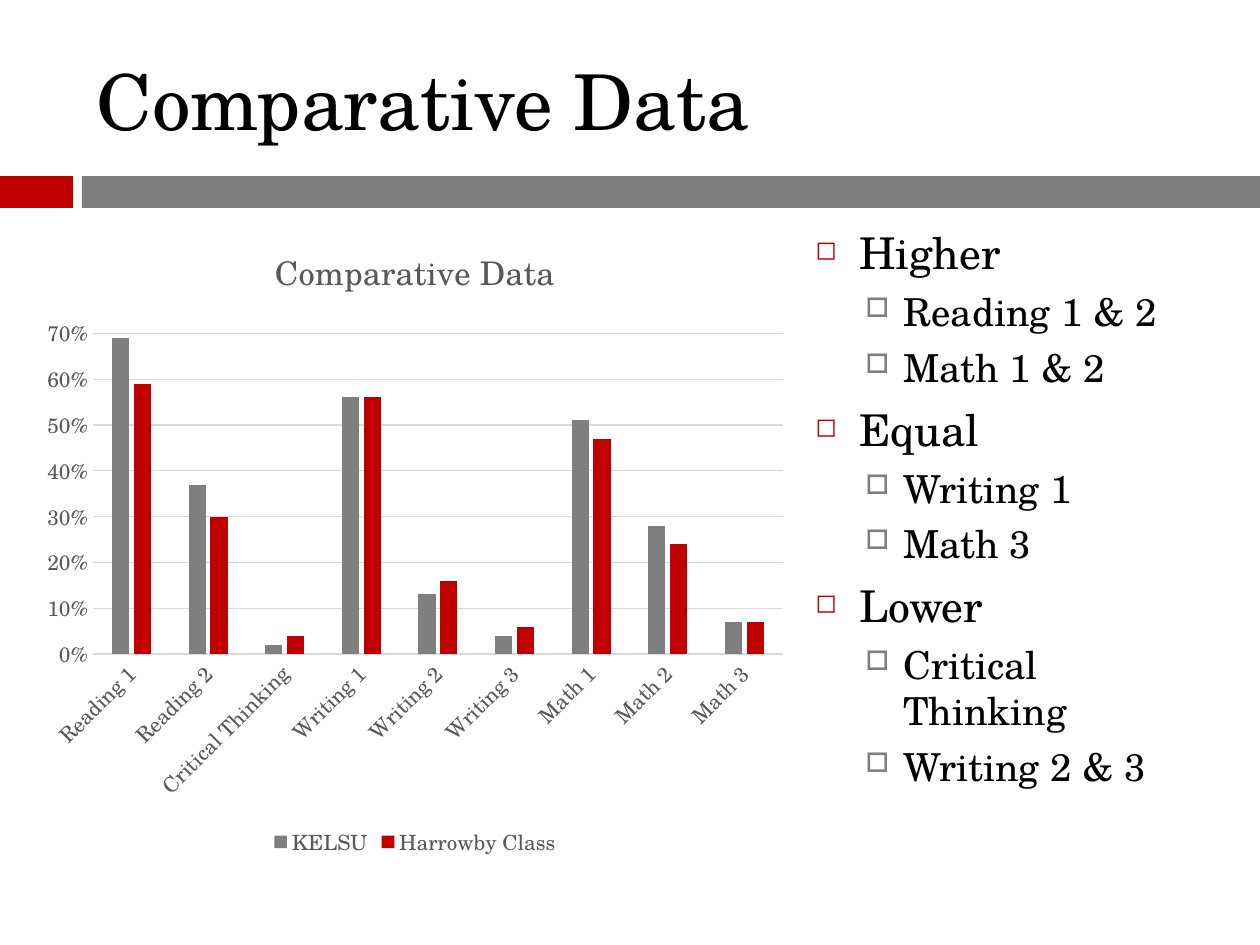
"""Build the comparative data slide: a clustered column chart beside a bulleted summary."""
import pptx
import pptx.chart.data
import pptx.dml.color
import pptx.enum.chart
import pptx.enum.shapes
import pptx.enum.text
import pptx.oxml.ns
import pptx.util
from lxml import etree

FACE = "TeX Gyre Schola"
RED, GRAY, PALE, DARK, BLACK = "C00000", "7F7F7F", "D9D9D9", "595959", "000000"
LEVELS = [
    {"size": 25, "gap": 7, "left": 44, "hang": 44, "mark": "◻", "hue": RED, "pct": 60},
    {"size": 22, "gap": 5.5, "left": 88, "hang": 38, "mark": "□", "hue": GRAY, "pct": 70},
]
GROUPS = {
    "Higher": ["Reading 1 & 2", "Math 1 & 2"],
    "Equal": ["Writing 1", "Math 3"],
    "Lower": ["Critical Thinking", "Writing 2 & 3"],
}
TESTS = ["Reading 1", "Reading 2", "Critical Thinking", "Writing 1", "Writing 2",
         "Writing 3", "Math 1", "Math 2", "Math 3"]
SERIES = [
    ("KELSU", GRAY, [0.69, 0.37, 0.02, 0.56, 0.13, 0.04, 0.51, 0.28, 0.07]),
    ("Harrowby Class", RED, [0.59, 0.3, 0.04, 0.56, 0.16, 0.06, 0.47, 0.24, 0.07]),
]


def px(num):
    return pptx.util.Emu(round(num * 914400 / 126))


def tint(code):
    return pptx.dml.color.RGBColor.from_string(code)


def apply(item, **vals):
    for key, val in vals.items():
        setattr(item, key, val)


def paint(fill, code):
    fill.solid()
    fill.fore_color.rgb = tint(code)


class Deck:
    def __init__(self, wide, high):
        self.show = pptx.Presentation()
        apply(self.show, slide_width=px(wide), slide_height=px(high))
        self.slide = self.show.slides.add_slide(self.show.slide_layouts[5])

    def style(self, font, size, code):
        apply(font, name=FACE, size=pptx.util.Pt(size), bold=False)
        font.color.rgb = tint(code)

    def rule(self, line):
        line.width = pptx.util.Pt(0.75)
        line.color.rgb = tint(PALE)

    def bar(self, left, top, wide, high, code):
        kind = pptx.enum.shapes.MSO_SHAPE.RECTANGLE
        shape = self.slide.shapes.add_shape(kind, *map(px, (left, top, wide, high)))
        shape.shadow.inherit = False
        paint(shape.fill, code)
        shape.line.fill.background()

    def title(self, text, left, top, wide, high):
        shape = self.slide.shapes.title
        apply(shape, left=px(left), top=px(top), width=px(wide), height=px(high))
        frame = shape.text_frame
        apply(frame, text=text, word_wrap=True,
              auto_size=pptx.enum.text.MSO_AUTO_SIZE.NONE,
              vertical_anchor=pptx.enum.text.MSO_ANCHOR.MIDDLE)
        para = frame.paragraphs[0]
        para.alignment = pptx.enum.text.PP_ALIGN.LEFT
        self.style(para.runs[0].font, 44, BLACK)

    def bullet(self, para, text, level):
        look = LEVELS[level]
        apply(para, level=level, space_before=pptx.util.Pt(look["gap"]))
        run = para.add_run()
        run.text = text
        self.style(run.font, look["size"], BLACK)
        props = para._p.get_or_add_pPr()
        props.set("marL", str(px(look["left"])))
        props.set("indent", str(-px(look["hang"])))
        name = pptx.oxml.ns.qn
        hue = etree.SubElement(props, name("a:buClr"))
        etree.SubElement(hue, name("a:srgbClr"), val=look["hue"])
        etree.SubElement(props, name("a:buSzPct"), val=str(look["pct"] * 1000))
        etree.SubElement(props, name("a:buChar"), char=look["mark"])

    def outline(self, groups, left, top, wide, high):
        box = self.slide.shapes.add_textbox(*map(px, (left, top, wide, high)))
        frame = box.text_frame
        frame.word_wrap = True
        rows = [row for head, subs in groups.items()
                for row in [(head, 0)] + [(sub, 1) for sub in subs]]
        for num, (text, level) in enumerate(rows):
            para = frame.add_paragraph() if num else frame.paragraphs[0]
            self.bullet(para, text, level)

    def chart(self, text, cats, series, left, top, wide, high):
        enum = pptx.enum.chart
        data = pptx.chart.data.CategoryChartData(number_format="0%")
        data.categories = cats
        for name, _, vals in series:
            data.add_series(name, vals)
        chart = self.slide.shapes.add_chart(
            enum.XL_CHART_TYPE.COLUMN_CLUSTERED,
            *map(px, (left, top, wide, high)), data).chart
        self.style(chart.font, 10, BLACK)
        chart.has_title = True
        head = chart.chart_title
        head.include_in_layout = False
        head.text_frame.text = text
        self.style(head.text_frame.paragraphs[0].runs[0].font, 18.6, DARK)
        chart.has_legend = True
        apply(chart.legend, position=enum.XL_LEGEND_POSITION.BOTTOM, include_in_layout=False)
        self.style(chart.legend.font, 12, DARK)
        plot = chart.plots[0]
        apply(plot, gap_width=219, overlap=-27, vary_by_categories=False)
        for item, (_, code, _) in zip(plot.series, series):
            item.invert_if_negative = False
            paint(item.format.fill, code)
        cat, val = chart.category_axis, chart.value_axis
        for axis in (cat, val):
            apply(axis, major_tick_mark=enum.XL_TICK_MARK.NONE,
                  minor_tick_mark=enum.XL_TICK_MARK.NONE)
            self.style(axis.tick_labels.font, 12, DARK)
        self.rule(cat.format.line)
        cat._element.find(".//" + pptx.oxml.ns.qn("a:bodyPr")).set("rot", "-2700000")
        apply(val, minimum_scale=0, maximum_scale=0.7, major_unit=0.1,
              has_major_gridlines=True)
        apply(val.tick_labels, number_format="0%", number_format_is_linked=False)
        val.format.line.fill.background()
        self.rule(val.major_gridlines.format.line)


def main():
    deck = Deck(1260, 945)
    deck.bar(0, 176, 73, 32, RED)
    deck.bar(82, 176, 1178, 32, GRAY)
    deck.title("Comparative Data", 84, 32, 1124, 136)
    deck.chart("Comparative Data", TESTS, SERIES, 32, 219, 766, 643)
    deck.outline(GROUPS, 803, 220, 406, 558)
    deck.show.save("out.pptx")


if __name__ == "__main__":
    main()
